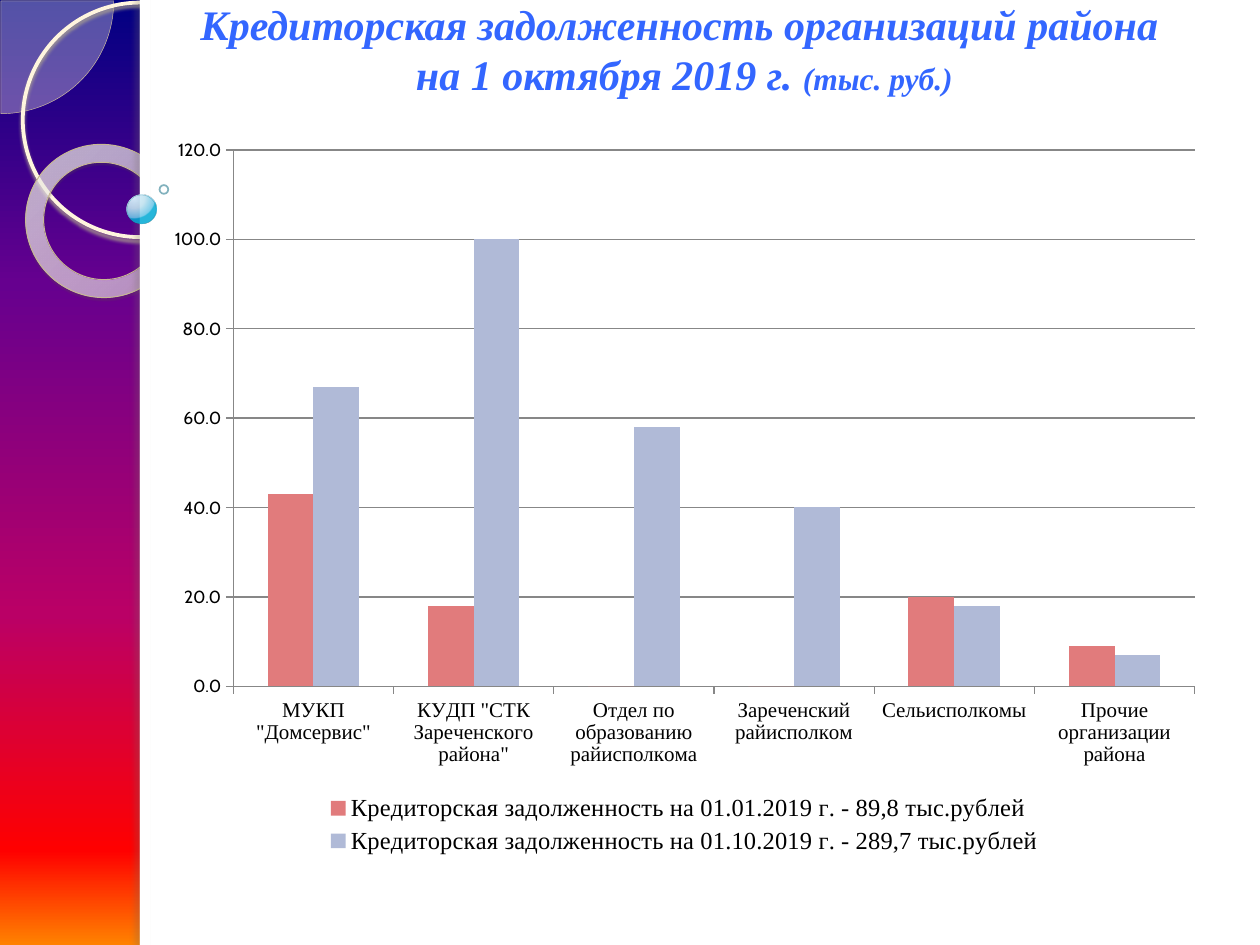
from dataclasses import dataclass
from typing import Optional

from lxml import etree
from pptx import Presentation
from pptx import util as u
from pptx.chart import data as cd
from pptx.dml import color as col
from pptx.enum import chart as ch, shapes as sh, text as tx
from pptx.oxml import ns, parse_xml


@dataclass(frozen=True)
class Theme:
    title: str = "3366FF"
    white: str = "FFFFFF"
    ink: str = "000000"
    axis: str = "878787"
    bars: tuple = ("E17B7C", "B0BAD7")
    serif: str = "Times New Roman"
    sans: str = "Cabin"
    head: float = 24
    unit: float = 18
    key: float = 14
    cat: float = 12
    val: float = 10


@dataclass(frozen=True)
class Grad:
    stops: tuple  # (position, colour, opacity), all in percent
    rect: Optional[tuple] = None  # focus of a round gradient; None is top to bottom


@dataclass(frozen=True)
class Part:
    kind: sh.MSO_SHAPE
    box: tuple
    fill: Optional[object] = None  # (colour, opacity) or Grad
    line: Optional[tuple] = None  # colour, width, opacity
    shade: Optional[tuple] = None  # colour, opacity, blur, distance, angle
    adj: tuple = ()
    turn: float = 0


T = Theme()
M = sh.MSO_SHAPE
SKY = Grad(((0, "000082", 100), (30, "66008F", 100), (65, "BA0066", 100),
            (90, "FF0000", 100), (100, "FF8200", 100)))
RING = Grad(((0, "FFFCF6", 70), (70, "FFFEFB", 55), (100, "F0D28E", 60)),
            (-408, -50, 508, 150))
BALL = Grad(((0, "DAF4FF", 95), (50, "C3E3F0", 90), (95, "6BC7E8", 88),
             (100, "00ABD5", 85)), (25, 12, 75, 88))
PARTS = (
    Part(M.PIE, (-64, -64, 129, 129), ("FEFAF4", 33), ("D3C39F", 0.25, 100),
         adj=(0, 54.02)),
    Part(M.OVAL, (13, 1.5, 134, 134), None, ("FFF5DE", 2.15, 100),
         ("B0A68F", 85, 2, 2, 90)),
    Part(M.DONUT, (14.4, 82.8, 88.5, 87), RING, ("C7B893", 0.58, 100),
         ("5A5444", 35, 1, 1.2, 75), (0.118,), 38.6),
    Part(M.RECTANGLE, (80, 0, 640, 540), (T.white, 100)),
    Part(M.RECTANGLE, (80, 0, 5.76, 540), (T.white, 100),
         shade=("736F63", 25, 3, 3, 180)),
    Part(M.OVAL, (72.6, 111.4, 16.6, 16.6), BALL, ("308EA5", 0.16, 60)),
    Part(M.OVAL, (91.2, 105.8, 5, 5), None, ("318093", 1, 60)),
)
TITLE = (
    (("Кредиторская задолженность организаций района ", T.head),),
    (("на 1 октября 2019 г. ", T.head), ("(тыс. руб.)", T.unit)),
)
CATS = ('МУКП "Домсервис"', 'КУДП "СТК Зареченского района"',
        "Отдел по образованию райисполкома", "Зареченский райисполком",
        "Сельисполкомы", "Прочие организации района")
ROWS = (
    ("Кредиторская задолженность на 01.01.2019 г. - 89,8 тыс.рублей",
     (43, 18, 0, 0, 20, 9)),
    ("Кредиторская задолженность на 01.10.2019 г. - 289,7 тыс.рублей",
     (67, 100, 58, 40, 18, 7)),
)


def rgb(code: str) -> col.RGBColor:
    return col.RGBColor.from_string(code)


def pts(box: tuple) -> list:
    return [u.Pt(n) for n in box]


def tint(code: str, pct: float) -> str:
    return f'<a:srgbClr val="{code}"><a:alpha val="{pct * 1000}"/></a:srgbClr>'


def node(body: str) -> etree._Element:
    """Make one drawing element, its opening tag given the namespace."""
    tag, rest = body.split(" ", 1)
    return parse_xml(f'{tag} {ns.nsdecls("a")} {rest}')


def blend(grad: Grad) -> etree._Element:
    stops = "".join(f'<a:gs pos="{pos * 1000}">{tint(code, pct)}</a:gs>'
                    for pos, code, pct in grad.stops)
    if grad.rect:
        sides = " ".join(f'{s}="{n * 1000}"' for s, n in zip("ltrb", grad.rect))
        way = f'<a:path path="circle"><a:fillToRect {sides}/></a:path>'
    else:
        way = '<a:lin ang="5400000" scaled="0"/>'
    return node(f'<a:gradFill rotWithShape="1"><a:gsLst>{stops}</a:gsLst>{way}</a:gradFill>')


def swap(home: etree._Element, new: etree._Element) -> None:
    """Put a new fill where the empty one stands."""
    home.replace(home.find(ns.qn("a:noFill")), new)


def draw(slide, part: Part) -> None:
    shape = slide.shapes.add_shape(part.kind, *pts(part.box))
    shape.rotation = part.turn
    for i, val in enumerate(part.adj):
        shape.adjustments[i] = val
    props = shape.element.spPr
    shape.fill.background()
    if isinstance(part.fill, Grad):
        swap(props, blend(part.fill))
    elif part.fill:
        swap(props, node(f'<a:solidFill >{tint(*part.fill)}</a:solidFill>'))
    shape.line.fill.background()
    if part.line:
        code, width, pct = part.line
        shape.line.width = u.Pt(width)
        swap(props.find(ns.qn("a:ln")), node(f'<a:solidFill >{tint(code, pct)}</a:solidFill>'))
    shape.shadow.inherit = False
    if part.shade:
        code, pct, blur, dist, ang = part.shade
        props.find(ns.qn("a:effectLst")).append(node(
            f'<a:outerShdw blurRad="{u.Pt(blur)}" dist="{u.Pt(dist)}" dir="{ang * 60000}" '
            f'algn="ctr" rotWithShape="0">{tint(code, pct)}</a:outerShdw>'))


def style(font, size: float, face: str, code: str = T.ink) -> None:
    font.size, font.name = u.Pt(size), face
    font.color.rgb = rgb(code)


def head(slide) -> None:
    box = slide.shapes.title
    box.left, box.top, box.width, box.height = pts((87.6, 3.2, 607, 57))
    box.element.getparent().append(box.element)  # above the side band
    frame = box.text_frame
    frame.auto_size = tx.MSO_AUTO_SIZE.NONE
    frame.word_wrap = True
    frame.vertical_anchor = tx.MSO_ANCHOR.BOTTOM
    for i, line in enumerate(TITLE):
        para = frame.add_paragraph() if i else frame.paragraphs[0]
        para.alignment = tx.PP_ALIGN.CENTER
        for words, size in line:
            run = para.add_run()
            run.text = words
            style(run.font, size, T.serif, T.title)
            run.font.bold = run.font.italic = True


def graph(slide) -> None:
    data = cd.CategoryChartData(number_format="#,##0.0")
    data.categories = CATS
    for name, vals in ROWS:
        data.add_series(name, vals)
    chart = slide.shapes.add_chart(ch.XL_CHART_TYPE.COLUMN_CLUSTERED,
                                   *pts((87.8, 71.3, 607, 420)), data).chart
    style(chart.font, T.val, T.sans)
    chart.has_title = False
    plot = chart.plots[0]
    plot.gap_width, plot.overlap, plot.vary_by_categories = 150, 0, False
    for row, code in zip(plot.series, T.bars):
        row.format.fill.solid()
        row.format.fill.fore_color.rgb = rgb(code)
        row.invert_if_negative = False
    # Axes
    cat, val = chart.category_axis, chart.value_axis
    val.minimum_scale, val.maximum_scale, val.major_unit = 0, 120, 20
    val.has_major_gridlines = True
    val.tick_labels.number_format = "#,##0.0"
    val.tick_labels.number_format_is_linked = False
    style(val.tick_labels.font, T.val, T.sans)
    style(cat.tick_labels.font, T.cat, T.serif)
    for axis in (cat, val):
        axis.major_tick_mark = ch.XL_TICK_MARK.OUTSIDE
    for item in (cat, val, val.major_gridlines):
        item.format.line.color.rgb = rgb(T.axis)
        item.format.line.width = u.Pt(0.75)
    # Legend
    chart.has_legend = True
    chart.legend.position = ch.XL_LEGEND_POSITION.BOTTOM
    chart.legend.include_in_layout = False
    style(chart.legend.font, T.key, T.serif)


def main() -> None:
    deck = Presentation()
    deck.slide_width, deck.slide_height = u.Pt(720), u.Pt(540)
    slide = deck.slides.add_slide(deck.slide_layouts[5])
    # Background and side band
    slide.background.fill.background()
    swap(slide.element.find(".//" + ns.qn("p:bgPr")), blend(SKY))
    for part in PARTS:
        draw(slide, part)
    # Content
    head(slide)
    graph(slide)
    deck.save("out.pptx")


if __name__ == "__main__":
    main()
